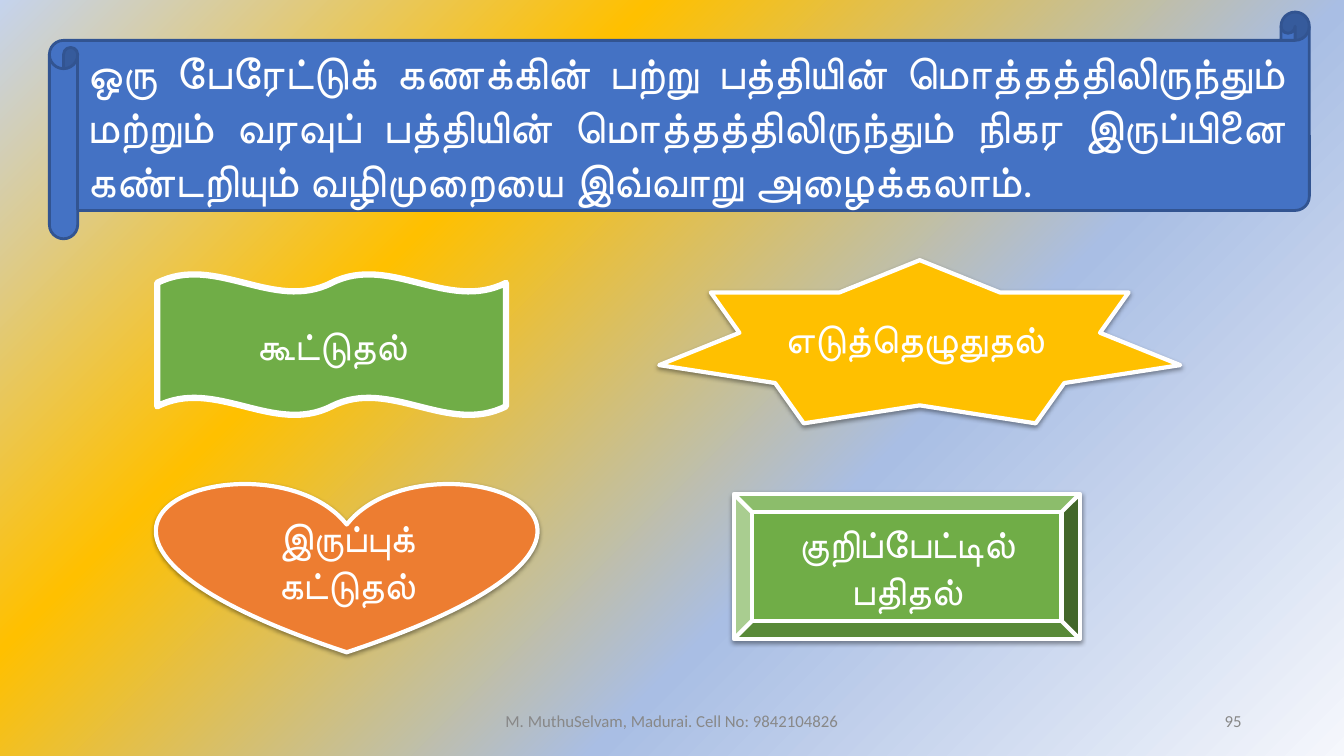
from lxml import etree
from pptx import Presentation
from pptx.dml.color import RGBColor
from pptx.enum.shapes import MSO_SHAPE as Preset
from pptx.enum.text import MSO_ANCHOR as Anchor, PP_ALIGN as Align
from pptx.oxml import parse_xml
from pptx.oxml.ns import nsdecls, qn
from pptx.util import Pt

SLIDE_SIZE = (960, 540)
WHITE, GREY = "FFFFFF", "888888"
BACKGROUND_STOPS = [(0, "F5F7FC"), (36, "A9BEE4"), (69, "FFC000"), (100, "C5D3ED")]

# preset, box, fill, line colour, line width, shadow, alignment, text size, text
PANELS = [
    (Preset.HEART, (112.3, 344.2, 270.7, 121.7), "ED7D31", WHITE, 3, True,
     Align.CENTER, 28, "இருப்புக் கட்டுதல்"),
    (Preset.STAR_7_POINT, (470.9, 185.8, 372.2, 116.6), "FFC000", WHITE, 3, True,
     Align.LEFT, 28, "எடுத்தெழுதுதல்"),
    (Preset.BEVEL, (524.2, 352.8, 247, 103.7), "70AD47", WHITE, 3, True,
     Align.CENTER, 28, "குறிப்பேட்டில் பதிதல்"),
    (Preset.DOUBLE_WAVE, (112.3, 195.8, 249.1, 100.8), "70AD47", WHITE, 4.5, False,
     Align.CENTER, 28, "கூட்டுதல்"),
    (Preset.HORIZONTAL_SCROLL, (35.3, 8.6, 900, 162), "4472C4", "325491", 2, False,
     Align.JUSTIFY, 32,
     "ஒரு பேரேட்டுக் கணக்கின் பற்று பத்தியின் மொத்தத்திலிருந்தும் மற்றும் வரவுப் "
     "பத்தியின் மொத்தத்திலிருந்தும் நிகர இருப்பினை கண்டறியும் வழிமுறையை இவ்வாறு "
     "அழைக்கலாம்."),
]

# box, alignment, text
FOOTERS = [
    ((318, 500.5, 324, 28.75), Align.CENTER, "M. MuthuSelvam, Madurai. Cell No: 9842104826"),
    ((678, 500.5, 216, 28.75), Align.RIGHT, "95"),
]


def color(value):
    return RGBColor.from_string(value)


def points(values):
    return [Pt(value) for value in values]


def set_background(slide):
    """Fill the slide with a gradient spreading from the bottom right corner."""
    stops = "".join(
        f'<a:gs pos="{position * 1000}"><a:srgbClr val="{value}"/></a:gs>'
        for position, value in BACKGROUND_STOPS)
    background = parse_xml(
        f'<p:bg {nsdecls("p", "a")}><p:bgPr><a:gradFill><a:gsLst>{stops}</a:gsLst>'
        '<a:path path="circle"><a:fillToRect l="100000" t="100000"/></a:path>'
        '<a:tileRect r="-100000" b="-100000"/></a:gradFill><a:effectLst/></p:bgPr></p:bg>')
    slide.element.cSld.insert(0, background)


def add_shadow(shape):
    effects = shape.element.spPr.find(qn("a:effectLst"))
    shadow = etree.SubElement(
        effects, qn("a:outerShdw"), blurRad=str(Pt(3.1)), dist=str(Pt(1.6)),
        dir="5400000", algn="ctr", rotWithShape="0")
    black = etree.SubElement(shadow, qn("a:srgbClr"), val="000000")
    etree.SubElement(black, qn("a:alpha"), val="38000")


def write(shape, text, alignment, size, font_name, font_color):
    frame = shape.text_frame
    frame.word_wrap = True
    frame.vertical_anchor = Anchor.MIDDLE
    frame.text = text
    paragraph = frame.paragraphs[0]
    paragraph.alignment = alignment
    font = paragraph.runs[0].font
    font.size, font.name = Pt(size), font_name
    font.color.rgb = color(font_color)


def add_panel(slide, preset, box, fill, line, line_width, shadow, alignment, size, text):
    shape = slide.shapes.add_shape(preset, *points(box))
    shape.shadow.inherit = False
    shape.fill.solid()
    shape.fill.fore_color.rgb = color(fill)
    shape.line.color.rgb = color(line)
    shape.line.width = Pt(line_width)
    if shadow:
        add_shadow(shape)
    write(shape, text, alignment, size, "Roboto", WHITE)


def main():
    presentation = Presentation()
    presentation.slide_width, presentation.slide_height = points(SLIDE_SIZE)
    slide = presentation.slides.add_slide(presentation.slide_layouts[6])
    set_background(slide)
    for panel in PANELS:
        add_panel(slide, *panel)
    for box, alignment, text in FOOTERS:
        footer = slide.shapes.add_textbox(*points(box))
        write(footer, text, alignment, 12, "Calibri", GREY)
    presentation.save("out.pptx")


if __name__ == "__main__":
    main()
